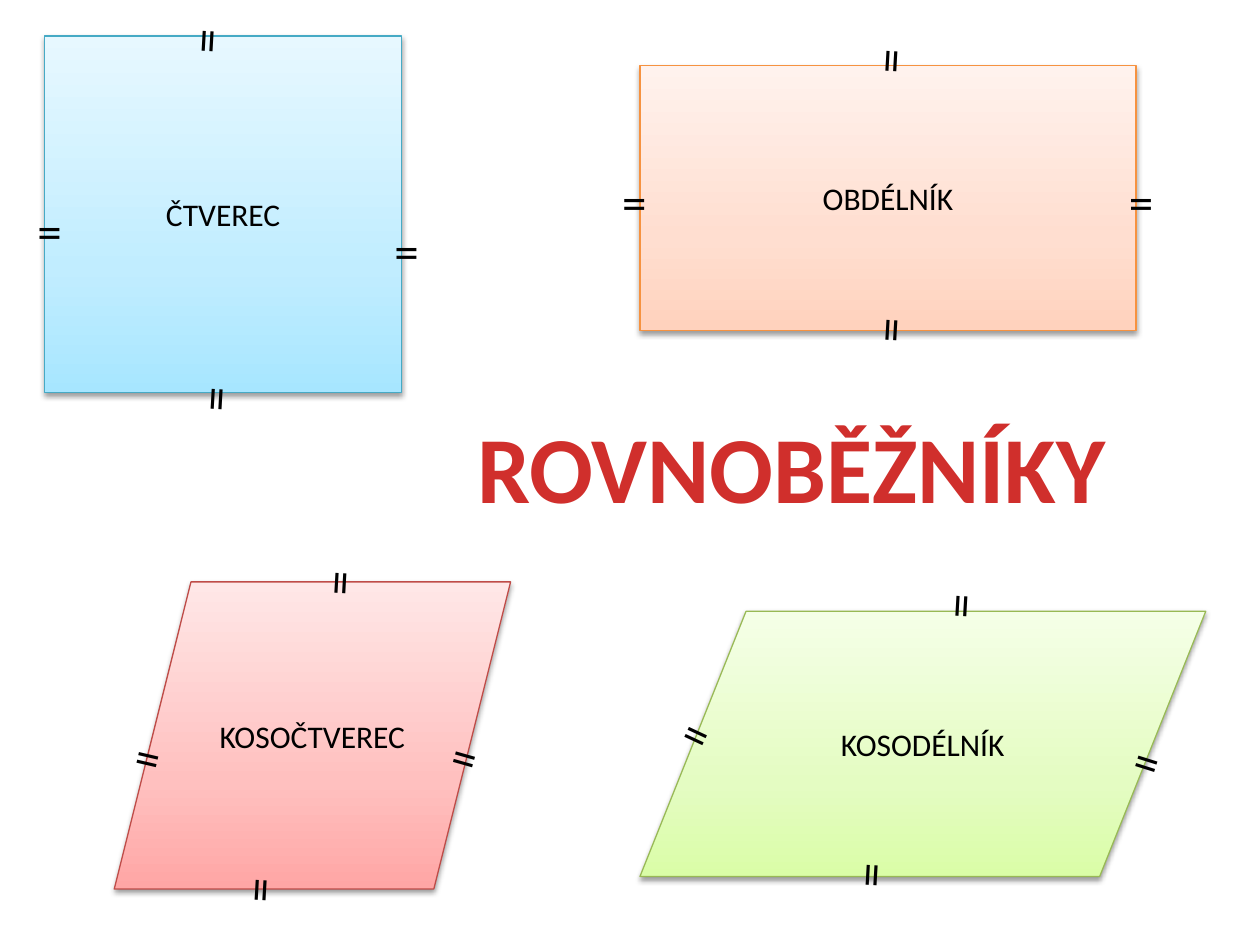
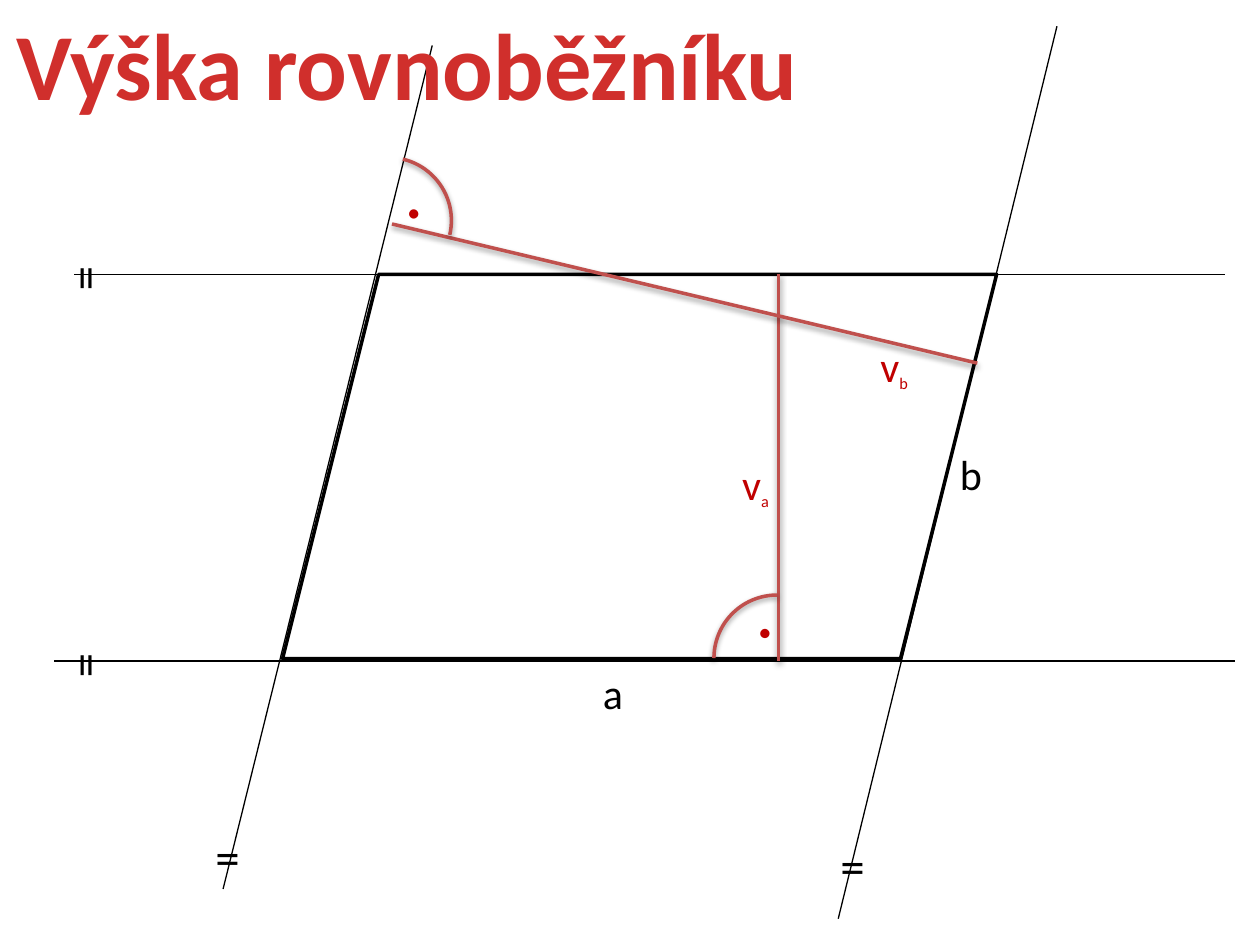
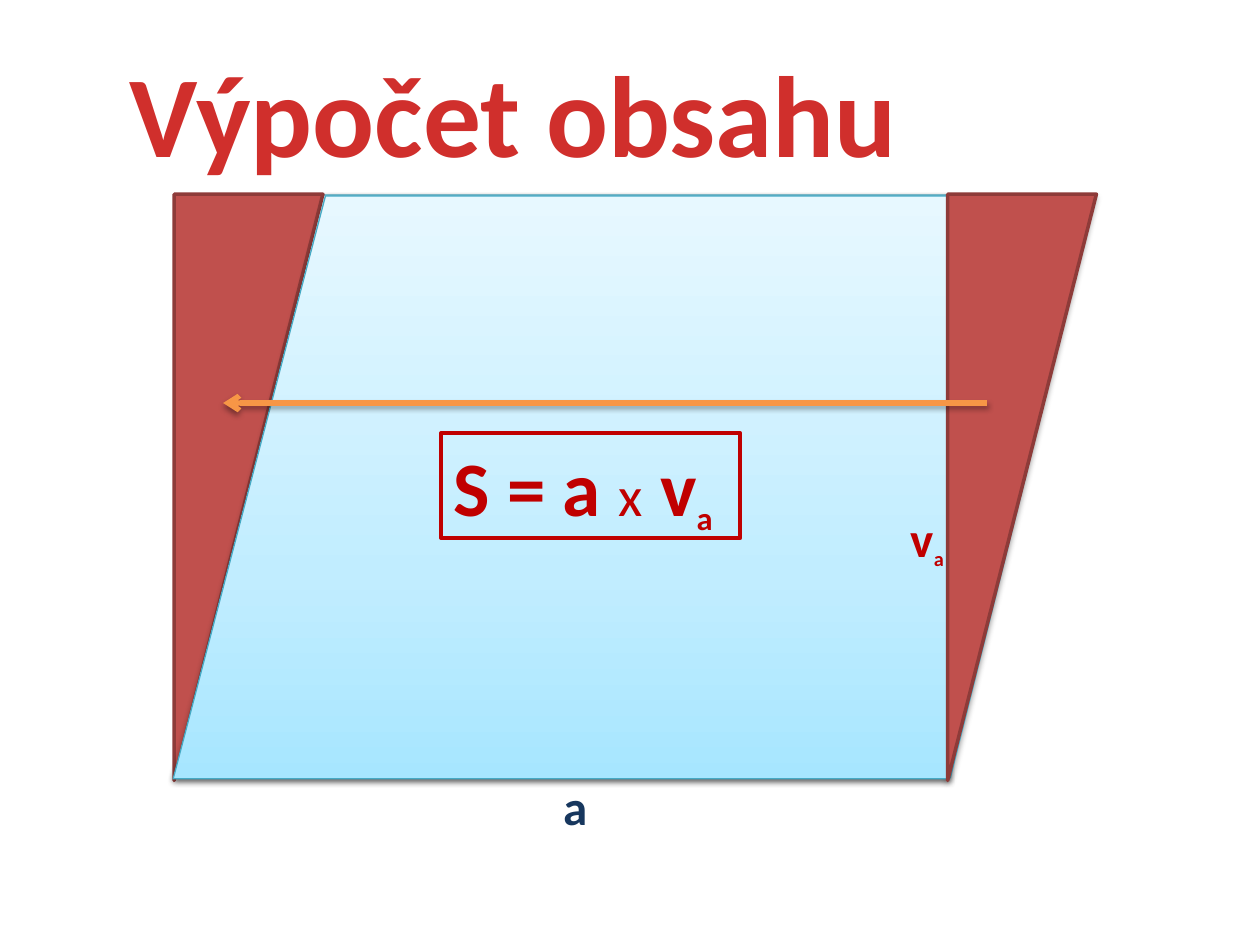
"""Build three slides on parallelograms: their kinds, heights and area."""
from copy import deepcopy

from lxml import etree
from pptx import Presentation
from pptx.dml.color import RGBColor
from pptx.enum.shapes import MSO_CONNECTOR, MSO_SHAPE
from pptx.enum.text import MSO_ANCHOR, MSO_AUTO_SIZE, PP_ALIGN
from pptx.oxml.ns import qn
from pptx.util import Pt

STRAIGHT = MSO_CONNECTOR.STRAIGHT
RECTANGLE = MSO_SHAPE.RECTANGLE
PARALLELOGRAM = MSO_SHAPE.PARALLELOGRAM
TRIANGLE = MSO_SHAPE.RIGHT_TRIANGLE
ARC = MSO_SHAPE.ARC
CENTER = PP_ALIGN.CENTER
MIDDLE = MSO_ANCHOR.MIDDLE
NO_FIT = MSO_AUTO_SIZE.NONE

FONT = "Calibri"
TITLE_ONLY = 5
COLORS = {
    "black": "000000", "white": "FFFFFF", "title": "D02F2C",
    "height": "C00000", "brick": "C0504D", "brick_edge": "8E3B39",
    "navy": "17375E", "arrow": "F79646", "blue_edge": "46AAC5",
    "orange_edge": "F69240", "red_edge": "BF4C48", "green_edge": "98B955",
}
RAMPS = {
    "blue": ("A7E6FF", "C1EDFF", "E7F8FF"),
    "orange": ("FFD2BD", "FFDED0", "FFF2ED"),
    "red": ("FFA6A5", "FFC0BF", "FFE7E7"),
    "green": ("DAFDA7", "E4FCC2", "F5FFE7"),
}
RAMP_POSITIONS = (0, 0.35, 1)


def rgb(name):
    """Return the named colour."""
    return RGBColor.from_string(COLORS[name])


def set_shadow(item, visible):
    """Give a shape or connector a soft shadow below it, or none."""
    effects = etree.SubElement(item.element.spPr, qn("a:effectLst"))
    if visible:
        shadow = etree.SubElement(effects, qn("a:outerShdw"), blurRad="40000",
                                  dist="20000", dir="5400000", rotWithShape="0")
        black = etree.SubElement(shadow, qn("a:srgbClr"), val=COLORS["black"])
        etree.SubElement(black, qn("a:alpha"), val="38000")


def set_ramp(shape, name):
    """Fill a shape with a three-stop gradient that lightens upwards."""
    shape.fill.gradient()
    shape.fill.gradient_angle = 90
    stop_list = shape.element.spPr.find(qn("a:gradFill")).find(qn("a:gsLst"))
    stop_list.insert(1, deepcopy(stop_list[0]))
    for stop, color, position in zip(shape.fill.gradient_stops, RAMPS[name], RAMP_POSITIONS):
        stop.color.rgb = RGBColor.from_string(color)
        stop.position = position


def style_shape(shape, edge, width, fill=None, shadow=False):
    """Set the fill, outline and shadow of a shape."""
    if fill in RAMPS:
        set_ramp(shape, fill)
    elif fill:
        shape.fill.solid()
        shape.fill.fore_color.rgb = rgb(fill)
    else:
        shape.fill.background()
    shape.line.color.rgb = rgb(edge)
    shape.line.width = Pt(width)
    set_shadow(shape, shadow)


def add_figure(page, kind, box, edge, width, fill=None, shadow=False, rotation=0):
    """Add a preset shape at box (left, top, width, height)."""
    shape = page.shapes.add_shape(kind, *map(Pt, box))
    shape.rotation = rotation
    style_shape(shape, edge, width, fill, shadow)
    return shape


def add_named_figure(page, name, kind, box, color):
    """Add a gradient quadrilateral with its name in the middle."""
    shape = add_figure(page, kind, box, color + "_edge", 0.75, color, True)
    shape.text_frame.vertical_anchor = MIDDLE
    para = shape.text_frame.paragraphs[0]
    para.text = name
    para.alignment = CENTER
    para.font.name = FONT
    para.font.size = Pt(18)
    para.font.color.rgb = rgb("black")
    return shape


def add_triangle(page, left):
    """Add a triangle with its right angle at the top left."""
    add_figure(page, TRIANGLE, (left, 236, 335, 85), "brick_edge", 2, "brick", rotation=90)


def add_line(page, start, end, color="black", width=0.75, shadow=False, arrow=False):
    """Add a straight line, with an arrowhead at its end if asked."""
    line = page.shapes.add_connector(STRAIGHT, *map(Pt, start + end))
    line.line.color.rgb = rgb(color)
    line.line.width = Pt(width)
    if arrow:
        etree.SubElement(line.element.spPr.find(qn("a:ln")), qn("a:tailEnd"), type="arrow")
    set_shadow(line, shadow)


def add_label(page, left, top, spans, color="black", rotation=0, width=27.5):
    """Add one line of text from spans of (text, size, bold, subscript)."""
    height = spans[0][1] * 1.2 + 7.2
    box = page.shapes.add_textbox(Pt(left), Pt(top), Pt(width), Pt(height))
    box.rotation = rotation
    box.text_frame.word_wrap = False
    para = box.text_frame.paragraphs[0]
    para.font.name = FONT
    para.font.color.rgb = rgb(color)
    for text, size, bold, subscript in spans:
        span = para.add_run()
        span.text = text
        span.font.name = FONT
        span.font.color.rgb = rgb(color)
        span.font.size = Pt(size)
        span.font.bold = bold
        if subscript:
            span.font._element.set("baseline", "-25000")
    return box


def add_text(page, left, top, text, size, color="black", rotation=0, bold=False):
    """Add a label that has a single style."""
    add_label(page, left, top, [(text, size, bold, False)], color, rotation)


def add_height_name(page, left, top, side, size, small, bold=False):
    """Add the letter v with the side as its subscript."""
    spans = [("v", size, bold, False), (side, small, bold, True)]
    add_label(page, left, top, spans, "height", width=42)


def add_marks(page, marks):
    """Add equal-sides signs at (left, top, rotation)."""
    for left, top, rotation in marks:
        add_text(page, left, top, "=", 28, rotation=rotation)


def set_title(page, text, box, size):
    """Place and format the title in front of the drawing."""
    title = page.shapes.title
    title.left, title.top, title.width, title.height = map(Pt, box)
    title.text_frame.text = text
    title.text_frame.word_wrap = False
    title.text_frame.auto_size = NO_FIT
    para = title.text_frame.paragraphs[0]
    para.alignment = CENTER
    para.font.name = FONT
    para.font.size = Pt(size)
    para.font.bold = True
    para.font.color.rgb = rgb("title")
    title.element.getparent().append(title.element)


def build_kinds(page):
    """Draw the four kinds of parallelogram."""
    add_named_figure(page, "ČTVEREC", RECTANGLE, (25.5, 20.5, 204, 204), "blue")
    add_named_figure(page, "OBDÉLNÍK", RECTANGLE, (365.7, 37.5, 283.5, 151.5), "orange")
    add_named_figure(page, "KOSOČTVEREC", PARALLELOGRAM, (65.3, 332.5, 226.5, 175.5), "red")
    rhomboid = add_named_figure(page, "KOSODÉLNÍK", PARALLELOGRAM,
                                (365.7, 349.3, 323.3, 151.5), "green")
    rhomboid.adjustments[0] = 0.4
    level = [(14.3, 111.3), (218.3, 122.5), (638, 94.5), (348.5, 94.5)]
    upright = [(107.2, 3.2), (112.4, 207.5), (498, 14.7), (498, 168.2),
               (183, 312.8), (137.5, 488.3), (538, 326.3), (486.7, 479.5)]
    slanted = [(70.8, 411.8, 13.2), (252.2, 411.8, 15.9),
               (384.5, 398.5, 25), (642, 414, 17.4)]
    add_marks(page, [(*place, 0) for place in level])
    add_marks(page, [(*place, 93.2) for place in upright])
    add_marks(page, slanted)
    set_title(page, "ROVNOBĚŽNÍKY", (263.5, 230, 377.5, 72.5), 54)


def build_heights(page):
    """Draw a parallelogram with both of its heights."""
    add_figure(page, PARALLELOGRAM, (161.5, 156.8, 408, 219.5), "black", 2, "white")
    for start, end in [((247, 26), (127.5, 508)), ((604, 15), (479, 525)),
                       ((42.5, 156.8), (700, 156.8)), ((31, 377.8), (705.5, 377.8))]:
        add_line(page, start, end)
    add_marks(page, [(37.7, 138.8, 90), (37.7, 359.8, 90), (473.2, 474, 0), (116, 468.5, 0)])
    add_text(page, 337.5, 378, "a", 24)
    add_text(page, 541.5, 252.5, "b", 24)
    for start, end, corner, turn in [((445, 156.8), (445, 377.8), (408, 340), 270),
                                     ((224, 128), (558.5, 207.5), (186, 90), 13.2)]:
        add_line(page, start, end, "brick", 2, True)
        add_figure(page, ARC, (*corner, 72, 72), "brick", 2, shadow=True, rotation=turn)
    add_text(page, 408.5, 334.7, ".", 44, "height", 257)
    add_text(page, 224, 77.3, ".", 44, "height")
    add_height_name(page, 417, 258.5, "a", 24, 16)
    add_height_name(page, 496, 190.8, "b", 24, 16)
    set_title(page, "Výška rovnoběžníku", (0, 0, 465, 72), 54)


def build_area(page):
    """Show how moving a triangle turns the parallelogram into a rectangle."""
    add_figure(page, PARALLELOGRAM, (99.3, 111.5, 527, 333), "blue_edge", 0.75, "blue", True)
    add_line(page, (541.5, 111.5), (541.5, 445.5), "brick", 2, True)
    add_triangle(page, -25.5)
    outline = page.shapes.build_freeform(99.3, 445, scale=Pt(1))
    outline.add_line_segments([(541.5, 445), (542, 111.5), (185.5, 111.5)])
    style_shape(outline.convert_to_shape(), "blue_edge", 0.75, "blue", True)
    add_triangle(page, 416.5)
    add_line(page, (564, 230.3), (127.5, 230.3), "arrow", 3, True, arrow=True)
    add_text(page, 314.8, 440, "a", 28, "navy", bold=True)
    add_height_name(page, 513.3, 287.3, "a", 28, 20, True)
    formula = add_label(page, 252, 247.5, [
        ("S = a ", 44, True, False), ("x", 32, False, False),
        (" v", 44, True, False), ("a", 32, True, True)], "height", width=171)
    formula.line.color.rgb = rgb("height")
    formula.line.width = Pt(2.25)
    set_title(page, "Výpočet obsahu", (65, 20, 457, 87), 66)


def main():
    """Build the deck and save it."""
    deck = Presentation()
    deck.slide_width, deck.slide_height = Pt(720), Pt(540)
    for build in (build_kinds, build_heights, build_area):
        build(deck.slides.add_slide(deck.slide_layouts[TITLE_ONLY]))
    deck.save("out.pptx")


if __name__ == "__main__":
    main()
